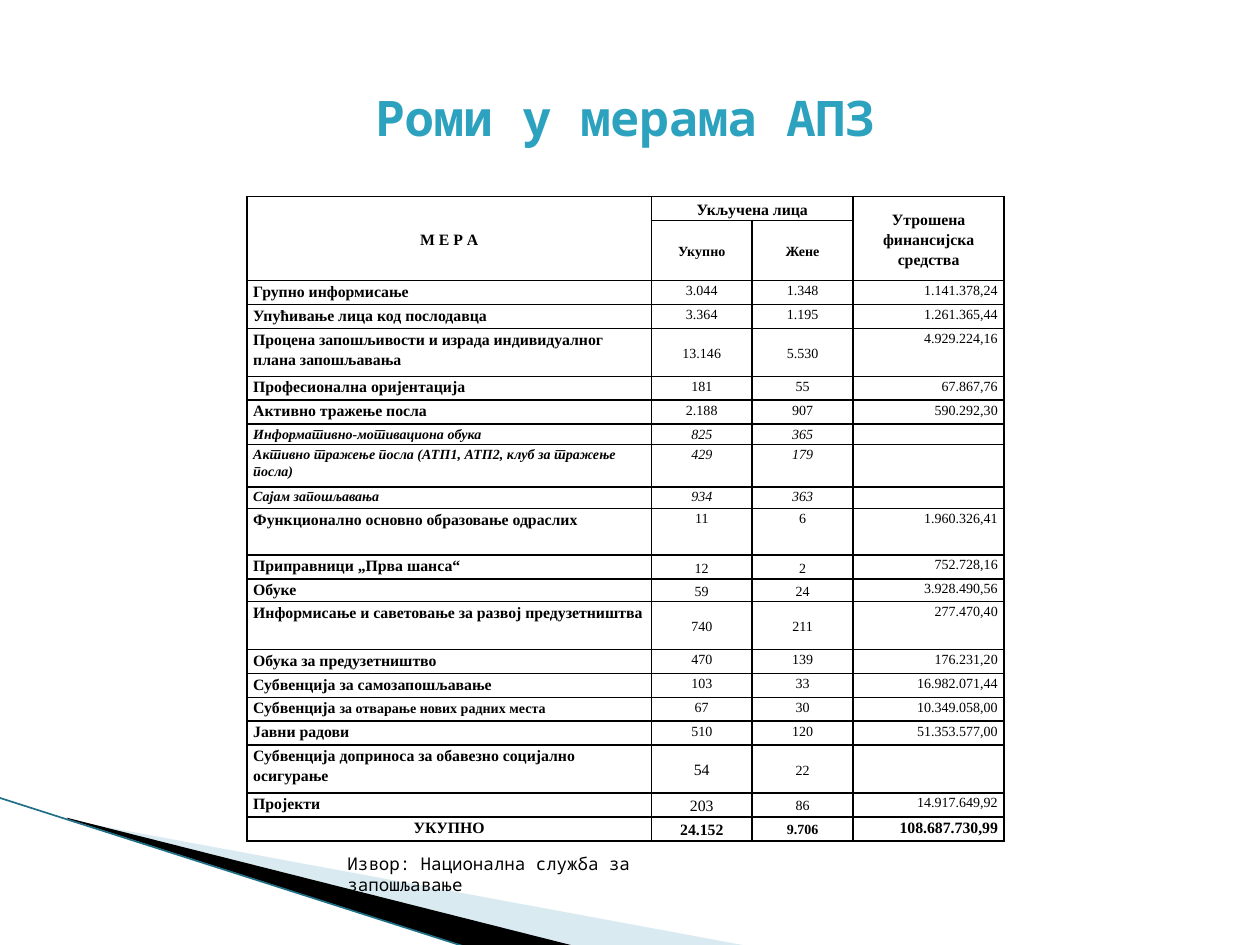
from lxml import etree
from pptx import Presentation
from pptx import util as u
from pptx.dml.color import RGBColor
from pptx.enum import shapes, text
from pptx.oxml import ns

COLORS = {"title": "2DA2BF", "ink": "000000", "pale": "A0CBDC", "edge": "1F7086"}
SERIF, MONO = "Times New Roman", "Noto Sans Mono"
LEFT, CENTER, RIGHT = text.PP_ALIGN.LEFT, text.PP_ALIGN.CENTER, text.PP_ALIGN.RIGHT
TOP, MIDDLE = text.MSO_ANCHOR.TOP, text.MSO_ANCHOR.MIDDLE
COLUMNS = [3.21, 0.8, 0.8, 1.2]
HEADER_HEIGHTS = [0.19, 0.38]

MEASURES = [
    ("Групно информисање", "3.044", "1.348", "1.141.378,24", 0.19, {}),
    ("Упућивање лица код послодавца", "3.364", "1.195", "1.261.365,44", 0.19, {}),
    ("Процена запошљивости и израда индивидуалног плана запошљавања",
     "13.146", "5.530", "4.929.224,16", 0.38, {"anchor": MIDDLE}),
    ("Професионална оријентација", "181", "55", "67.867,76", 0.19, {}),
    ("Активно тражење посла", "2.188", "907", "590.292,30", 0.19, {}),
    ("Информативно-мотивациона обука", "825", "365", "", 0.16, {"italic": True}),
    ("Активно тражење посла (АТП1, АТП2, клуб за тражење посла)",
     "429", "179", "", 0.34, {"italic": True}),
    ("Сајам запошљавања", "934", "363", "", 0.17, {"italic": True}),
    ("Функционално основно образовање одраслих", "11", "6", "1.960.326,41", 0.37, {}),
    ("Приправници „Прва шанса“", "12", "2", "752.728,16", 0.19, {"anchor": MIDDLE}),
    ("Обуке", "59", "24", "3.928.490,56", 0.18, {"anchor": MIDDLE}),
    ("Информисање и саветовање за развој предузетништва",
     "740", "211", "277.470,40", 0.38, {"anchor": MIDDLE}),
    ("Обука за предузетништво", "470", "139", "176.231,20", 0.19, {}),
    ("Субвенција за самозапошљавање", "103", "33", "16.982.071,44", 0.19, {}),
    ([("Субвенција ", 9), ("за отварање нових радних места", 8)],
     "67", "30", "10.349.058,00", 0.19, {}),
    ("Јавни радови", "510", "120", "51.353.577,00", 0.19, {}),
    ("Субвенција доприноса за обавезно социјално осигурање",
     "54", "22", "", 0.38, {"anchor": MIDDLE, "total_size": 9}),
    ("Пројекти", "203", "86", "14.917.649,92", 0.19, {"anchor": MIDDLE, "total_size": 9}),
    ("УКУПНО", "24.152", "9.706", "108.687.730,99", 0.19,
     {"anchor": MIDDLE, "total_size": 9, "spent_size": 9, "bold": True, "align": CENTER}),
]


def write(frame, content, size, font=SERIF, color="ink", bold=False, italic=False,
          align=LEFT, spacing=None):
    para = frame.paragraphs[0]
    para.alignment = align
    if spacing:
        para.line_spacing = spacing
    if not content:
        etree.SubElement(para._p, ns.qn("a:endParaRPr"), sz=str(size * 100))
        return
    pieces = [(content, size)] if isinstance(content, str) else content
    for words, points in pieces:
        span = para.add_run()
        span.text = words
        span._r.get_or_add_rPr().set("lang", "sr-Cyrl-RS")
        span.font.name = font
        span.font.size = u.Pt(points)
        span.font.bold = bold
        span.font.italic = italic
        span.font.color.rgb = RGBColor.from_string(COLORS[color])


def set_frame(shape, left, top, width, height):
    shift_x, shift_y = shape.left - u.Inches(left), shape.top - u.Inches(top)
    shape.left, shape.top = u.Inches(left), u.Inches(top)
    shape.width, shape.height = u.Inches(width), u.Inches(height)
    outline = shape._element.spPr.find(".//" + ns.qn("a:path"))
    outline.set("w", str(shape.width))
    outline.set("h", str(shape.height))
    for point in outline.iter(ns.qn("a:pt")):
        point.set("x", str(int(point.get("x")) + shift_x))
        point.set("y", str(int(point.get("y")) + shift_y))


def wedge(page, frame, points, color, alpha=None):
    corners = [(u.Inches(x), u.Inches(y)) for x, y in points]
    builder = page.shapes.build_freeform(*corners[0])
    builder.add_line_segments(corners[1:], close=True)
    shape = builder.convert_to_shape()
    set_frame(shape, *frame)
    shape.shadow.inherit = False
    shape.line.fill.background()
    shape.fill.solid()
    shape.fill.fore_color.rgb = RGBColor.from_string(COLORS[color])
    if alpha:
        tint = shape._element.spPr.find(".//" + ns.qn("a:srgbClr"))
        etree.SubElement(tint, ns.qn("a:alpha"), val=str(alpha * 1000))


def corner_decoration(page, left, top, right, bottom):
    wedge(page, (0.78, 5.47, 4.16, 1.58),
          [(0.55, 6.51), (5.95, 7.51), (4.56, 7.51), (0.55, 6.5)], "pale", alpha=40)
    wedge(page, (-0.06, 6.33, 4.16, 0.92),
          [(0.53, 6.49), (4.57, 7.51), (3.72, 7.52), (0.54, 6.5)], "ink")
    edge = page.shapes.add_connector(shapes.MSO_CONNECTOR.STRAIGHT, u.Inches(left),
                                     u.Inches(top), u.Inches(right), u.Inches(bottom))
    edge.line.color.rgb = RGBColor.from_string(COLORS["edge"])
    edge.line.width = u.Pt(0.95)
    etree.SubElement(edge._element.spPr, ns.qn("a:effectLst"))


def heading(page, left, top, width, height):
    title = page.shapes.title
    title.left, title.top = u.Inches(left), u.Inches(top)
    title.width, title.height = u.Inches(width), u.Inches(height)
    title.text_frame.vertical_anchor = MIDDLE
    write(title.text_frame, "Роми у мерама АПЗ", 28, font=MONO, color="title",
          bold=True, align=CENTER)


def style_cell(cell):
    cell.margin_left = cell.margin_right = u.Inches(0.05)
    cell.margin_top = cell.margin_bottom = 0
    props = cell._tc.get_or_add_tcPr()
    for side in ("lnL", "lnR", "lnT", "lnB"):
        border = etree.SubElement(props, ns.qn("a:" + side), w=str(u.Pt(1)))
        fill = etree.SubElement(border, ns.qn("a:solidFill"))
        etree.SubElement(fill, ns.qn("a:srgbClr"), val=COLORS["ink"])
    cell.fill.background()


def fill_cell(cell, content, size, anchor=TOP, **style):
    cell.vertical_anchor = anchor
    write(cell.text_frame, content, size, spacing=1.15, **style)


def header_rows(table):
    labels = {(0, 0): ("М Е Р А", 9), (0, 1): ("Укључена лица", 9),
              (0, 3): ("Утрошена финансијска средства", 9),
              (1, 1): ("Укупно", 8), (1, 2): ("Жене", 8)}
    for row in range(2):
        for column in range(len(COLUMNS)):
            content, size = labels.get((row, column), ("", 8))
            fill_cell(table.cell(row, column), content, size, anchor=MIDDLE,
                      bold=True, align=CENTER)
    for start, end in [((0, 0), (1, 0)), ((0, 1), (0, 2)), ((0, 3), (1, 3))]:
        table.cell(*start).merge(table.cell(*end))


def measure_row(table, row, label, total, women, spent, anchor=TOP, italic=False,
                bold=False, align=LEFT, total_size=8, spent_size=8):
    fill_cell(table.cell(row, 0), label, 8 if italic else 9, bold=True,
              italic=italic, align=align)
    for column, value, size in [(1, total, total_size), (2, women, 8)]:
        fill_cell(table.cell(row, column), value, size, anchor=anchor, bold=bold,
                  italic=italic, align=CENTER)
    fill_cell(table.cell(row, 3), spent, spent_size, bold=bold, align=RIGHT)


def measures_table(page, left, top, width, height):
    heights = HEADER_HEIGHTS + [measure[4] for measure in MEASURES]
    table = page.shapes.add_table(len(heights), len(COLUMNS), u.Inches(left),
                                  u.Inches(top), u.Inches(width), u.Inches(height)).table
    table.first_row = table.horz_banding = False
    for column, size in zip(table.columns, COLUMNS):
        column.width = u.Inches(size)
    for row, size in zip(table.rows, heights):
        row.height = u.Inches(size)
        for cell in row.cells:
            style_cell(cell)
    header_rows(table)
    for row, (*values, _, style) in enumerate(MEASURES, start=len(HEADER_HEIGHTS)):
        measure_row(table, row, *values, **style)


def source_note(page, left, top, width, height):
    box = page.shapes.add_textbox(u.Inches(left), u.Inches(top),
                                  u.Inches(width), u.Inches(height))
    box.text_frame.word_wrap = True
    write(box.text_frame, "Извор: Национална служба за запошљавање", 10, font=MONO)


def main():
    deck = Presentation()
    deck.slide_width, deck.slide_height = u.Inches(10), u.Inches(7.5)
    page = deck.slides.add_slide(deck.slide_layouts[5])
    corner_decoration(page, -0.01, 6.33, 3.71, 7.52)
    heading(page, 1.95, 0.3, 6.02, 1.25)
    measures_table(page, 1.96, 1.56, 6.02, 5.02)
    source_note(page, 2.66, 6.72, 3.3, 0.27)
    deck.save("out.pptx")


if __name__ == "__main__":
    main()
